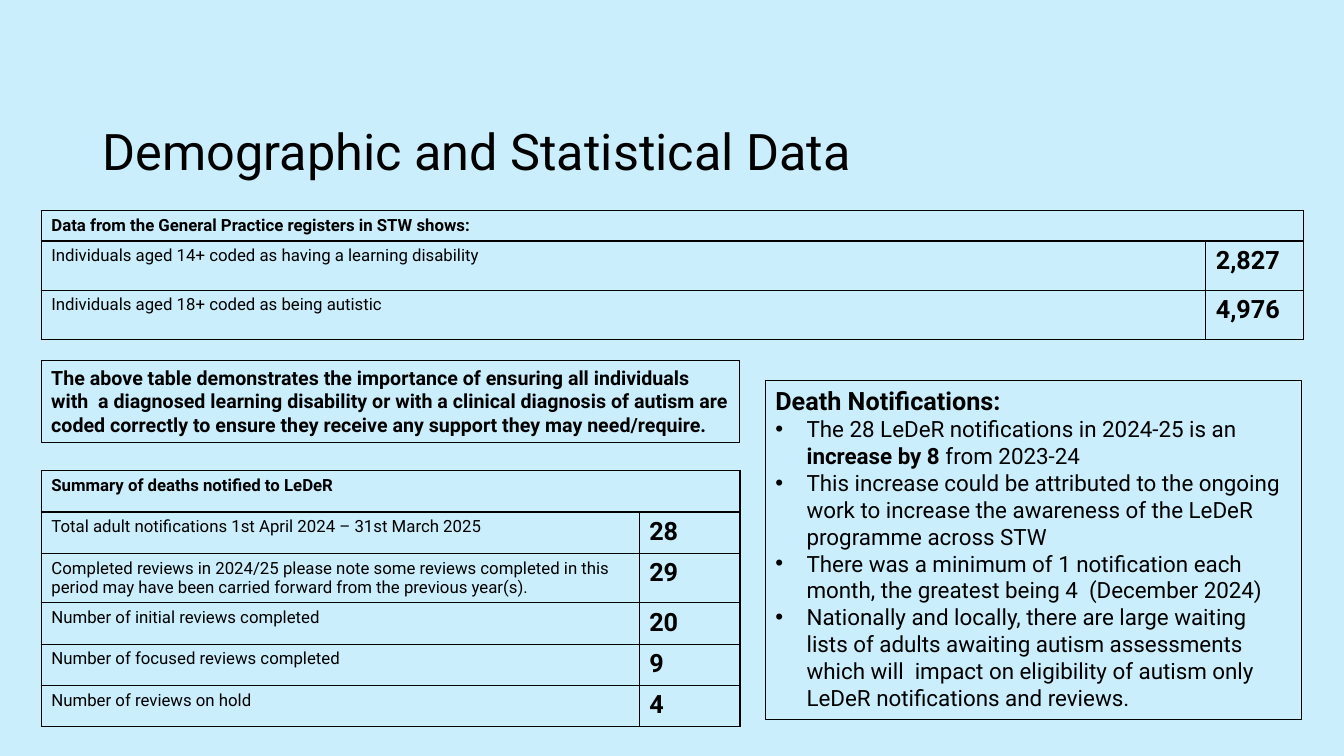
from dataclasses import dataclass

from lxml import etree
from pptx import Presentation
from pptx.dml.color import RGBColor
from pptx.enum.text import MSO_ANCHOR, MSO_AUTO_SIZE, PP_ALIGN
from pptx.oxml.ns import qn
from pptx.util import Inches, Pt

LEFT = PP_ALIGN.LEFT
TOP = MSO_ANCHOR.TOP
MIDDLE = MSO_ANCHOR.MIDDLE
NO_FIT = MSO_AUTO_SIZE.NONE

TITLE = "Demographic and Statistical Data"
REGISTERS = [
    ("Data from the General Practice registers in STW shows:", None),
    ("Individuals aged 14+ coded as having a learning disability", "2,827"),
    ("Individuals aged 18+ coded as being autistic", "4,976"),
]
DEATHS = [
    ("Summary of deaths notified to LeDeR", None),
    ("Total adult notifications 1st April 2024 – 31st March 2025", "28"),
    ("Completed reviews in 2024/25 please note some reviews completed in this "
     "period may have been carried forward from the previous year(s).", "29"),
    ("Number of initial reviews completed", "20"),
    ("Number of focused reviews completed", "9"),
    ("Number of reviews on hold", "4"),
]
IMPORTANCE = (
    "The above table demonstrates the importance of ensuring all individuals "
    "with  a diagnosed learning disability or with a clinical diagnosis of autism "
    "are coded correctly to ensure they receive any support they may need/require."
)
NOTICE_HEADING = "Death Notifications:"
NOTICES = [
    [("The 28 LeDeR notifications in 2024-25 is an ", False),
     ("increase by 8", True), (" from 2023-24", False)],
    [("This increase could be attributed to the ongoing work to increase the "
      "awareness of the LeDeR programme across STW", False)],
    [("There was a minimum of 1 notification each month, the greatest being 4  "
      "(December 2024)", False)],
    [("Nationally and locally, there are large waiting lists of adults awaiting "
      "autism assessments which will  impact on eligibility of autism only LeDeR "
      "notifications and reviews.", False)],
]


@dataclass(frozen=True)
class Theme:
    font: str = "Roboto"
    ink: str = "000000"
    back: str = "CAEEFB"
    title: int = 36
    heading: int = 18
    bullet: int = 16
    note: int = 14
    label: int = 12
    box_line: float = 0.75
    cell_line: float = 1


THEME = Theme()
WIDTH, HEIGHT = 13.33, 7.5
MARGIN = 0.41
FULL = 12.52
HALF = 6.93
RIGHT_X = 7.59


def add_run(p, text, size, bold=False):
    r = p.add_run()
    r.text = text
    style = {"name": THEME.font, "size": Pt(size), "bold": bold}
    for name, value in style.items():
        setattr(r.font, name, value)
    r.font.color.rgb = RGBColor.from_string(THEME.ink)


def place(sp, left, top, width, height):
    box = {"left": left, "top": top, "width": width, "height": height}
    for name, value in box.items():
        setattr(sp, name, Inches(value))


def format_frame(tf, anchor):
    style = {"word_wrap": True, "auto_size": NO_FIT, "vertical_anchor": anchor}
    for name, value in style.items():
        setattr(tf, name, value)


def outline(sp):
    sp.fill.background()
    sp.line.color.rgb = RGBColor.from_string(THEME.ink)
    sp.line.width = Pt(THEME.box_line)


def set_bullet(p, char=None, indent=0.0):
    pPr = p._p.get_or_add_pPr()
    pPr.set("marL", str(Inches(indent)))
    pPr.set("indent", str(-Inches(indent)))
    if char:
        font = etree.SubElement(pPr, qn("a:buFont"))
        font.set("typeface", "Arial")
        etree.SubElement(pPr, qn("a:buChar")).set("char", char)
    else:
        etree.SubElement(pPr, qn("a:buNone"))
    p.space_before = Pt(0)
    p.alignment = LEFT


def format_cell(cell):
    tcPr = cell._tc.get_or_add_tcPr()
    for side in ("lnL", "lnR", "lnT", "lnB"):
        ln = etree.SubElement(tcPr, qn(f"a:{side}"), w=str(Pt(THEME.cell_line)))
        fill = etree.SubElement(ln, qn("a:solidFill"))
        etree.SubElement(fill, qn("a:srgbClr"), val=THEME.ink)
    cell.fill.background()


def add_data_table(slide, rows, top, widths, heights):
    frame = slide.shapes.add_table(
        len(rows), 2, Inches(MARGIN), Inches(top),
        Inches(sum(widths)), Inches(sum(heights)))
    table = frame.table
    table.first_row = table.horz_banding = False
    for column, width in zip(table.columns, widths):
        column.width = Inches(width)
    for i, (label, value) in enumerate(rows):
        table.rows[i].height = Inches(heights[i])
        header = value is None
        for cell in table.rows[i].cells:
            format_cell(cell)
        if header:
            table.cell(i, 0).merge(table.cell(i, 1))
        add_run(table.cell(i, 0).text_frame.paragraphs[0], label, THEME.label, header)
        if not header:
            add_run(table.cell(i, 1).text_frame.paragraphs[0], value, THEME.heading, True)


def add_title(slide):
    sp = slide.shapes.title
    place(sp, 0.92, 0.8, 11.5, 1.45)
    format_frame(sp.text_frame, MIDDLE)
    p = sp.text_frame.paragraphs[0]
    p.alignment = LEFT
    p.line_spacing = 0.9
    add_run(p, TITLE, THEME.title)


def add_notices(slide):
    sp = slide.placeholders[1]
    place(sp, RIGHT_X, 3.77, MARGIN + FULL - RIGHT_X - 0.02, 3.37)
    outline(sp)
    tf = sp.text_frame
    format_frame(tf, TOP)
    p = tf.paragraphs[0]
    set_bullet(p)
    add_run(p, NOTICE_HEADING, THEME.heading, True)
    for notice in NOTICES:
        p = tf.add_paragraph()
        set_bullet(p, "•", 0.31)
        for text, bold in notice:
            add_run(p, text, THEME.bullet, bold)


def add_importance(slide):
    sp = slide.shapes.add_textbox(0, 0, 0, 0)
    place(sp, MARGIN, 3.58, HALF, 0.81)
    outline(sp)
    format_frame(sp.text_frame, TOP)
    add_run(sp.text_frame.paragraphs[0], IMPORTANCE, THEME.note, True)


def main():
    prs = Presentation()
    prs.slide_width, prs.slide_height = Inches(WIDTH), Inches(HEIGHT)
    slide = prs.slides.add_slide(prs.slide_layouts[1])
    slide.background.fill.solid()
    slide.background.fill.fore_color.rgb = RGBColor.from_string(THEME.back)
    add_title(slide)
    add_data_table(slide, REGISTERS, 2.09, (FULL - 0.97, 0.97), (0.3, 0.49, 0.49))
    add_data_table(slide, DEATHS, 4.67, (HALF - 1, 1),
                   [0.49 if i == 2 else 0.41 for i in range(len(DEATHS))])
    add_notices(slide)
    add_importance(slide)
    prs.save("out.pptx")


if __name__ == "__main__":
    main()
